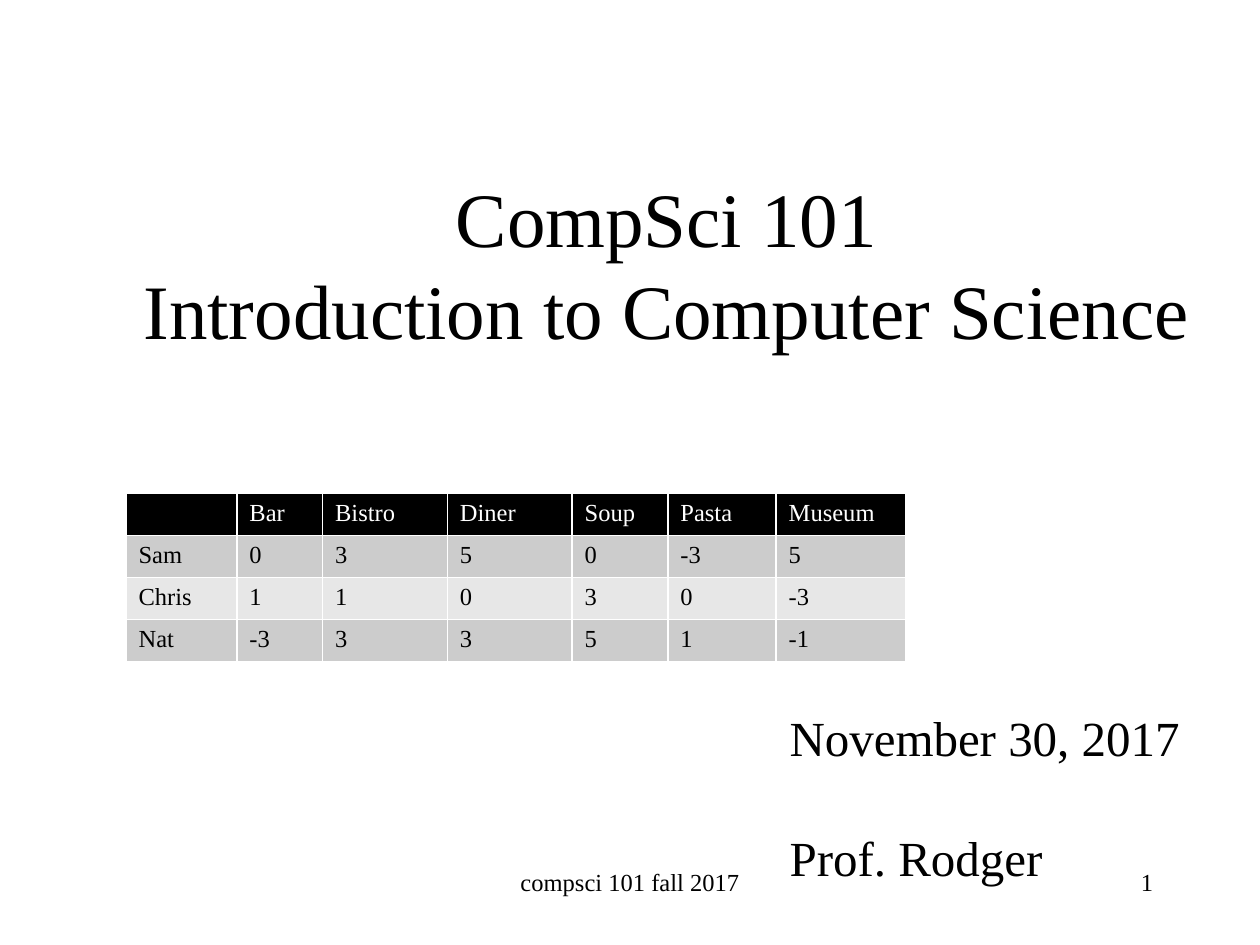
from lxml import etree
from pptx import Presentation, util as u
from pptx.dml.color import RGBColor
from pptx.enum import text
from pptx.oxml.ns import qn

UNIT = u.Inches(1) // 12
FONT = "Times New Roman"
BLACK, WHITE = "000000", "FFFFFF"
BAND_FILLS = ["CCCCCC", "E7E7E7"]
TITLE_BOX = (10, 12, 107, 26)
DATE_BOX = (74, 66.8, 40, 18.1)
TABLE_BOX = (12, 47, 74.3, 16)
FOOTER_BOX = (41, 82, 38, 6)
NUMBER_BOX = (86, 82, 25, 6)
COLUMN_SHARES = [88, 68, 99, 99, 76, 86, 103]
RATINGS = [
    ["", "Bar", "Bistro", "Diner", "Soup", "Pasta", "Museum"],
    ["Sam", 0, 3, 5, 0, -3, 5],
    ["Chris", 1, 1, 0, 3, 0, -3],
    ["Nat", -3, 3, 3, 5, 1, -1],
]


def color(value):
    return RGBColor.from_string(value)


def grid(box):
    return [round(length * UNIT) for length in box]


def set_all(target, values):
    for name, value in values.items():
        setattr(target, name, value)


def style(paragraph, size, value=BLACK, **layout):
    set_all(paragraph.font, {"name": FONT, "size": u.Pt(size)})
    paragraph.font.color.rgb = color(value)
    set_all(paragraph, layout)


def place(shape, box):
    set_all(shape, dict(zip(("left", "top", "width", "height"), grid(box))))


def add_title(slide, box):
    title = slide.shapes.title
    place(title, box)
    frame = title.text_frame
    set_all(frame, {"text": "CompSci 101\vIntroduction to Computer Science",
                    "vertical_anchor": text.MSO_ANCHOR.MIDDLE,
                    "auto_size": text.MSO_AUTO_SIZE.NONE})
    style(frame.paragraphs[0], 44, alignment=text.PP_ALIGN.CENTER)


def add_date_and_lecturer(slide, box):
    subtitle = slide.placeholders[1]
    place(subtitle, box)
    frame = subtitle.text_frame
    set_all(frame, {"text": "November 30, 2017\nProf. Rodger",
                    "word_wrap": False,
                    "vertical_anchor": text.MSO_ANCHOR.TOP,
                    "auto_size": text.MSO_AUTO_SIZE.SHAPE_TO_FIT_TEXT})
    for paragraph, gap in zip(frame.paragraphs, (0, 35)):
        style(paragraph, 28, alignment=text.PP_ALIGN.LEFT, space_before=u.Pt(gap))


def add_borders(cell, widths):
    properties = cell._tc.get_or_add_tcPr()
    for index, (side, width) in enumerate(widths.items()):
        line = etree.Element(qn(f"a:ln{side}"), w=str(u.Pt(width)))
        fill = etree.SubElement(line, qn("a:solidFill"))
        etree.SubElement(fill, qn("a:srgbClr"), val=WHITE)
        properties.insert(index, line)


def fill_cell(cell, value, is_header, fill):
    cell.text = str(value)
    style(cell.text_frame.paragraphs[0], 14, WHITE if is_header else BLACK)
    cell.fill.solid()
    cell.fill.fore_color.rgb = color(fill)
    add_borders(cell, {"L": 1, "R": 1, "T": 1, "B": 1})


def add_ratings(slide, box):
    frame = slide.shapes.add_table(len(RATINGS), len(COLUMN_SHARES), *grid(box))
    table = frame.table
    total_width, row_height = frame.width, frame.height // len(RATINGS)
    for column, share in zip(table.columns, COLUMN_SHARES):
        column.width = total_width * share // sum(COLUMN_SHARES)
    for index, values in enumerate(RATINGS):
        table.rows[index].height = row_height
        fill = BAND_FILLS[(index - 1) % 2] if index else BLACK
        for cell, value in zip(table.rows[index].cells, values):
            fill_cell(cell, value, index == 0, fill)


def add_footer_text(slide, box, words, alignment):
    frame = slide.shapes.add_textbox(*grid(box)).text_frame
    set_all(frame, {"text": words, "word_wrap": True})
    style(frame.paragraphs[0], 14, alignment=alignment)


def main():
    presentation = Presentation()
    set_all(presentation, {"slide_width": 120 * UNIT, "slide_height": 90 * UNIT})
    slide = presentation.slides.add_slide(presentation.slide_layouts[0])
    add_title(slide, TITLE_BOX)
    add_date_and_lecturer(slide, DATE_BOX)
    add_ratings(slide, TABLE_BOX)
    add_footer_text(slide, FOOTER_BOX, "compsci 101 fall 2017", text.PP_ALIGN.CENTER)
    add_footer_text(slide, NUMBER_BOX, "1", text.PP_ALIGN.RIGHT)
    presentation.save("out.pptx")


if __name__ == "__main__":
    main()
